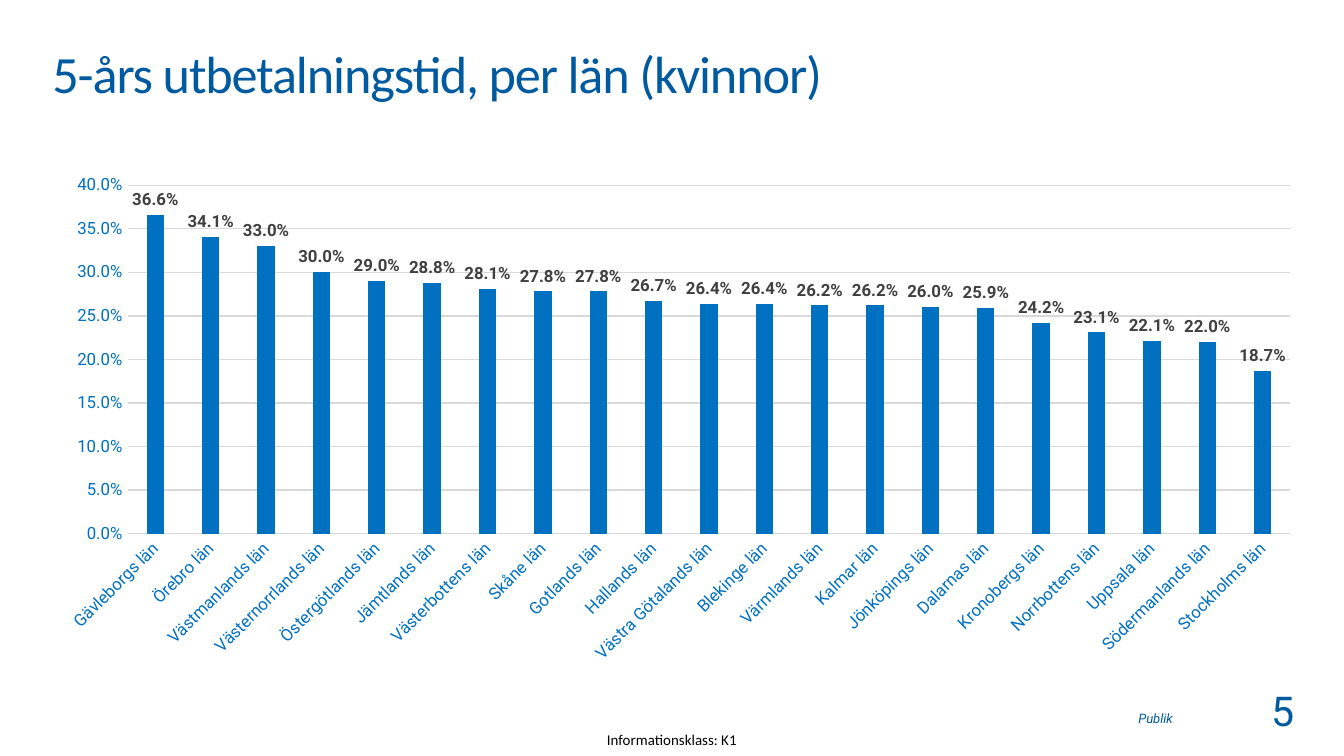
from pptx import Presentation
from pptx.chart.data import CategoryChartData
from pptx.dml.color import RGBColor
from pptx.enum import chart as ch, text as tx
from pptx.util import Inches, Pt

NAVY, BLUE, GREY = "005AA0", "0070C0", "D9D9D9"


def style_font(font, size, color, name="Roboto", **flags):
    font.size, font.name = Pt(size), name
    font.color.rgb = RGBColor.from_string(color)
    for key, value in flags.items():
        setattr(font, key, value)


def fill_text(shape, box, words, align, anchor, wrap=True, spacing=None, **look):
    """Place a shape and give it one formatted line without insets."""
    shape.left, shape.top, shape.width, shape.height = map(Inches, box)
    frame = shape.text_frame
    for side in ("left", "top", "right", "bottom"):
        setattr(frame, f"margin_{side}", 0)
    frame.auto_size = tx.MSO_AUTO_SIZE.NONE
    frame.word_wrap, frame.vertical_anchor = wrap, anchor
    line = frame.paragraphs[0]
    line.alignment, line.line_spacing = align, spacing
    run = line.add_run()
    run.text = words
    style_font(run.font, **look)
    return run


prs = Presentation()
prs.slide_width = Inches(10)
prs.slide_height = prs.slide_width * 9 // 16
slide = prs.slides.add_slide(prs.slide_layouts[5])
ALIGN, ANCHOR = tx.PP_ALIGN, tx.MSO_ANCHOR

heading = fill_text(slide.shapes.title, (0.39, 0.4, 9.22, 0.62),
                    "5-års utbetalningstid, per län (kvinnor)", ALIGN.LEFT, ANCHOR.TOP,
                    spacing=0.8, size=28, color=NAVY, name="Calibri")
heading.font._element.set("spc", "-60")

# Footer: classification, information class, page number
footers = [
    ((8.47, 5.24, 0.87, 0.16), "Publik", ALIGN.LEFT, ANCHOR.BOTTOM,
     dict(size=7, color=NAVY, italic=True)),
    ((4.38, 5.38, 1.24, 0.25), "Informationsklass: K1", ALIGN.CENTER, ANCHOR.MIDDLE,
     dict(size=8, color="000000", name="Calibri")),
    ((8.99, 5.1, 0.64, 0.31), "5", ALIGN.RIGHT, ANCHOR.TOP,
     dict(size=22, color=NAVY, wrap=False)),
]
for box, words, align, anchor, look in footers:
    footer = slide.shapes.add_textbox(*map(Inches, box))
    fill_text(footer, box, words, align, anchor, **look)

shares = {
    "Gävleborgs": 0.366, "Örebro": 0.341, "Västmanlands": 0.33,
    "Västernorrlands": 0.3, "Östergötlands": 0.29, "Jämtlands": 0.288,
    "Västerbottens": 0.281, "Skåne": 0.278, "Gotlands": 0.278,
    "Hallands": 0.267, "Västra Götalands": 0.264, "Blekinge": 0.264,
    "Värmlands": 0.262, "Kalmar": 0.262, "Jönköpings": 0.26,
    "Dalarnas": 0.259, "Kronobergs": 0.242, "Norrbottens": 0.231,
    "Uppsala": 0.221, "Södermanlands": 0.22, "Stockholms": 0.187,
}
data = CategoryChartData(number_format="0.0%")
data.categories = [f"{county} län" for county in shares]
data.add_series("Series 1", shares.values())

chart = slide.shapes.add_chart(
    ch.XL_CHART_TYPE.COLUMN_CLUSTERED,
    *map(Inches, (0.33, 1.23, 9.46, 3.78)), data).chart
chart.has_legend = chart.has_title = False
style_font(chart.font, 10, "000000")

counties, percent = chart.category_axis, chart.value_axis
for axis in (counties, percent):
    axis.major_tick_mark = axis.minor_tick_mark = ch.XL_TICK_MARK.NONE
    style_font(axis.tick_labels.font, 9, BLUE)
counties._element.txPr.bodyPr.set("rot", "-2700000")  # labels slant by 45 degrees

percent.minimum_scale, percent.maximum_scale, percent.major_unit = 0, 0.4, 0.05
percent.tick_labels.number_format = "0.0%"
percent.tick_labels.number_format_is_linked = False
percent.format.line.fill.background()
for line in (counties.format.line, percent.major_gridlines.format.line):
    line.width = Pt(0.75)
    line.color.rgb = RGBColor.from_string(GREY)

plot = chart.plots[0]
plot.gap_width, plot.overlap, plot.vary_by_categories = 219, -27, False
bars = plot.series[0].format.fill
bars.solid()
bars.fore_color.rgb = RGBColor.from_string(BLUE)

labels = plot.series[0].data_labels
labels.show_value = True
labels.number_format, labels.number_format_is_linked = "0.0%", False
labels.position = ch.XL_LABEL_POSITION.OUTSIDE_END
style_font(labels.font, 9, "404040", bold=True)

prs.save("out.pptx")
